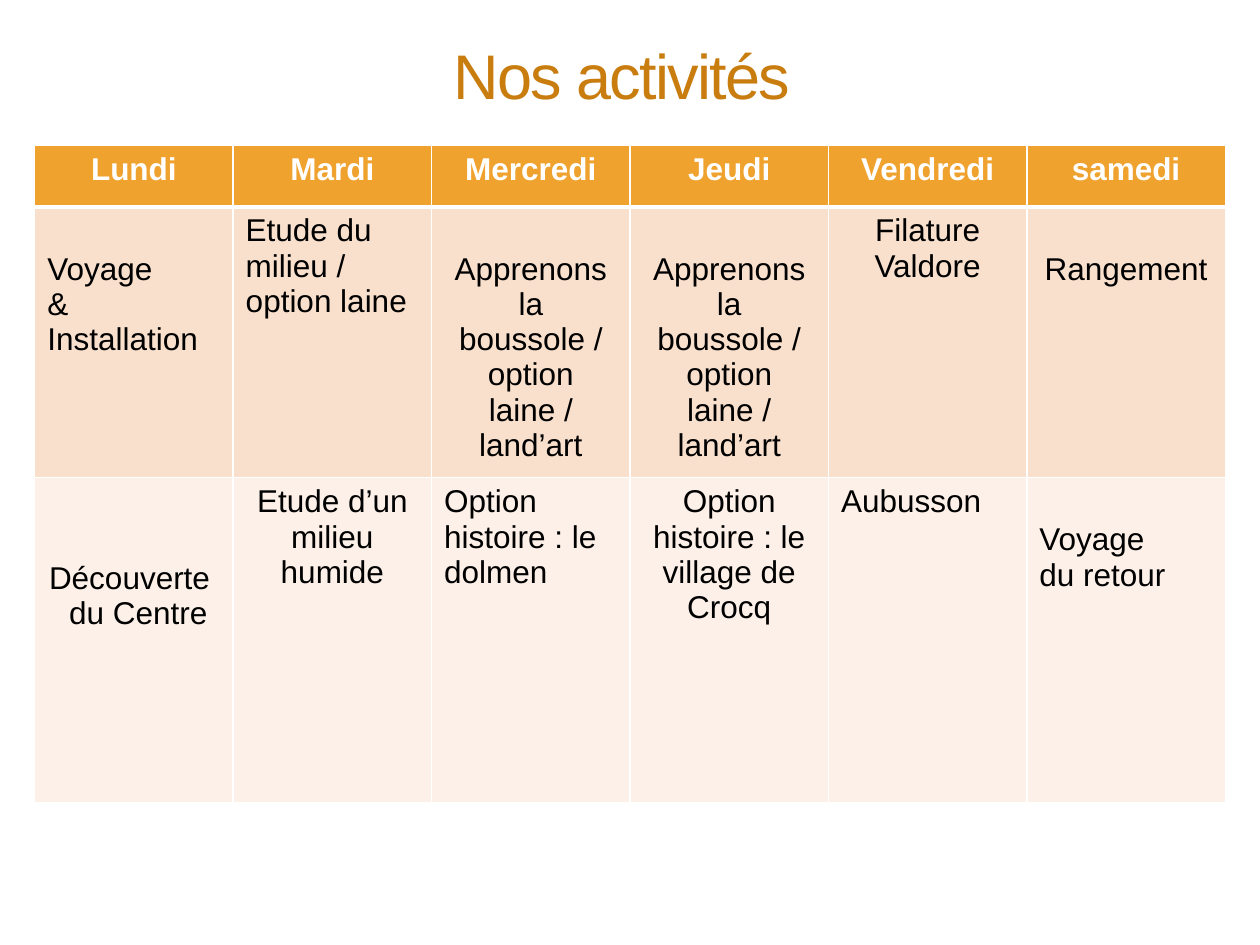
from dataclasses import dataclass

from lxml.etree import SubElement
from pptx import Presentation
from pptx.dml.color import RGBColor as Rgb
from pptx.enum.text import MSO_ANCHOR as Anchor, MSO_AUTO_SIZE as AutoSize, PP_ALIGN as Align
from pptx.oxml.ns import qn
from pptx.util import Cm, Pt


@dataclass(frozen=True)
class Theme:
    font: str = "Arial"
    title_size: int = 36
    table_size: int = 18
    title: str = "C87D0E"
    header: str = "F0A22E"
    header_text: str = "FFFFFF"
    body_text: str = "000000"
    bands: tuple = ("F9E0CD", "FCF0E8")
    border: str = "FFFFFF"
    thin: int = 1
    thick: int = 3


@dataclass
class Entry:
    lines: tuple
    align: Align = Align.CENTER
    top: float = 0.13


class SlideBuilder:
    def __init__(self, deck, theme):
        self.theme = theme
        self.slide = deck.slides.add_slide(deck.slide_layouts[5])

    def style(self, paragraph, size, color, align, bold=False):
        paragraph.alignment = align
        font = paragraph.font
        font.name, font.size, font.bold = self.theme.font, Pt(size), bold
        font.color.rgb = Rgb.from_string(color)

    def title(self, text, left, top, width, height):
        heading = self.slide.shapes.title
        heading.left, heading.top = Cm(left), Cm(top)
        heading.width, heading.height = Cm(width), Cm(height)
        frame = heading.text_frame
        frame.text = text
        frame.auto_size = AutoSize.NONE
        frame.vertical_anchor = Anchor.BOTTOM
        paragraph = frame.paragraphs[0]
        self.style(paragraph, self.theme.title_size, self.theme.title, Align.CENTER)
        paragraph.runs[0].font._element.set("spc", "-100")

    def borders(self, cell, top, bottom):
        properties = cell._tc.get_or_add_tcPr()
        thin = self.theme.thin
        for side, width in (("L", thin), ("R", thin), ("T", top), ("B", bottom)):
            line = SubElement(properties, qn(f"a:ln{side}"), w=str(Pt(width)))
            fill = SubElement(line, qn("a:solidFill"))
            SubElement(fill, qn("a:srgbClr"), val=self.theme.border)

    def cell(self, cell, entry, row):
        theme = self.theme
        is_header = row == 0
        self.borders(
            cell,
            theme.thick if row == 1 else theme.thin,
            theme.thick if is_header else theme.thin,
        )
        cell.fill.solid()
        cell.fill.fore_color.rgb = Rgb.from_string(theme.header if is_header else theme.bands[row - 1])
        cell.margin_top = Cm(entry.top)
        cell.text = "\n".join(entry.lines)
        color = theme.header_text if is_header else theme.body_text
        for paragraph in cell.text_frame.paragraphs:
            self.style(paragraph, theme.table_size, color, entry.align, is_header)

    def table(self, rows, left, top, column_width, row_heights):
        columns = len(rows[0])
        grid = self.slide.shapes.add_table(
            len(rows), columns, Cm(left), Cm(top),
            Cm(column_width * columns), Cm(sum(row_heights)),
        ).table
        for column in grid.columns:
            column.width = Cm(column_width)
        for row, (entries, height) in enumerate(zip(rows, row_heights)):
            grid.rows[row].height = Cm(height)
            for column, entry in enumerate(entries):
                self.cell(grid.cell(row, column), entry, row)


def main():
    deck = Presentation()
    deck.slide_width, deck.slide_height = Cm(25.4), Cm(19.05)

    one_line_down, two_lines_down = 0.9, 1.68
    days = [Entry((day,)) for day in ("Lundi", "Mardi", "Mercredi", "Jeudi", "Vendredi", "samedi")]
    compass = Entry(("Apprenons la boussole / option laine / land’art",), top=one_line_down)
    mornings = [
        Entry(("Voyage", "&", "Installation"), Align.LEFT, one_line_down),
        Entry(("Etude du milieu / option laine",), Align.LEFT),
        compass,
        compass,
        Entry(("Filature Valdore",)),
        Entry(("Rangement",), top=one_line_down),
    ]
    afternoons = [
        Entry(("Découverte ", " du Centre"), top=two_lines_down),
        Entry(("Etude d’un milieu humide",)),
        Entry(("Option histoire : le dolmen",), Align.LEFT),
        Entry(("Option histoire : le village de Crocq",)),
        Entry(("Aubusson",), Align.LEFT),
        Entry(("Voyage", "du retour"), Align.LEFT, one_line_down),
    ]

    builder = SlideBuilder(deck, Theme())
    builder.title("Nos activités ", 1.27, 0.76, 22.86, 1.63)
    builder.table([days, mornings, afternoons], 0.7, 2.93, 4, (1.24, 5.46, 6.55))
    deck.save("out.pptx")


if __name__ == "__main__":
    main()
